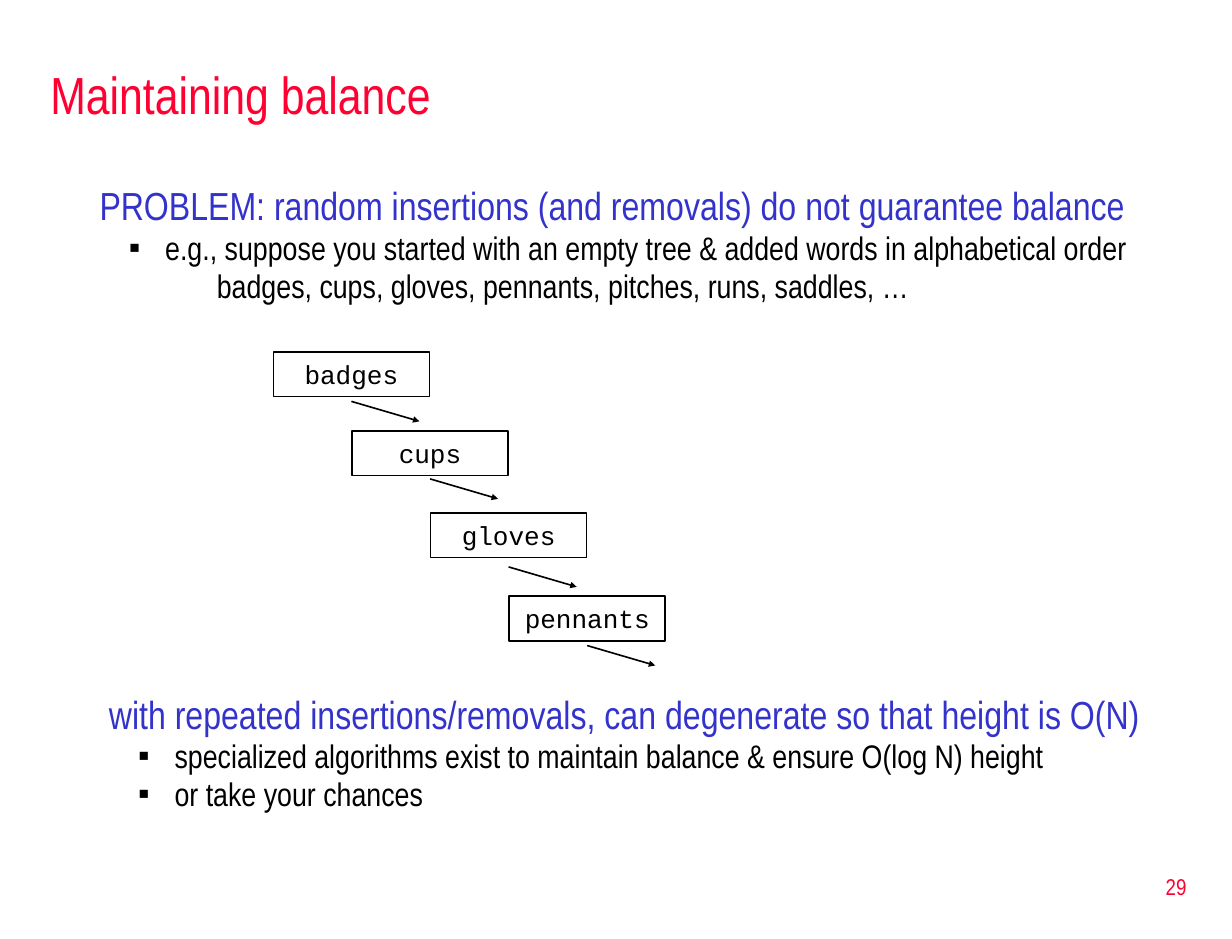
from dataclasses import dataclass

from lxml.etree import SubElement as Sub
from pptx import Presentation
from pptx.dml.color import RGBColor as RGB
from pptx.enum.shapes import MSO_CONNECTOR as Conn, MSO_SHAPE as Shape
from pptx.enum.text import MSO_ANCHOR as Anchor, PP_ALIGN as Align
from pptx.oxml.ns import qn
from pptx.util import Inches, Pt


@dataclass(frozen=True)
class Theme:
    red: RGB = RGB(0xFF, 0x00, 0x33)
    blue: RGB = RGB(0x33, 0x33, 0xCC)
    black: RGB = RGB(0, 0, 0)
    sans: str = "Arial Narrow"
    mono: str = "Courier New"
    title: int = 32
    head: int = 24
    body: int = 20
    node: int = 16
    foot: int = 14
    line: int = 1


THEME = Theme()
HEAD, ITEM, WORDS = range(3)
INDENT = {ITEM: (0.56, -0.31), WORDS: (1, 0)}

TOP = [
    (HEAD, "PROBLEM: random insertions (and removals) do not guarantee balance"),
    (ITEM, "e.g., suppose you started with an empty tree & added words in alphabetical order"),
    (WORDS, "badges, cups, gloves, pennants, pitches, runs, saddles, …"),
]
END = [
    (HEAD, "with repeated insertions/removals, can degenerate so that height is O(N)"),
    (ITEM, "specialized algorithms exist to maintain balance & ensure O(log N) height"),
    (ITEM, "or take your chances"),
]
NODES = [
    ("badges", 3, 3.42),
    ("cups", 3.67, 4.08),
    ("gloves", 4.37, 4.83),
    ("pennants", 5.08, 5.5),
]
LEFT, STEP = 2.33, 0.67
WIDE, HIGH = 1.33, 0.38


def style(para, size, color, name=THEME.sans):
    font = para.font
    font.name, font.size = name, Pt(size)
    font.color.rgb = color


def add_box(slide, left, top, width, height):
    box = slide.shapes.add_textbox(*map(Inches, (left, top, width, height)))
    box.text_frame.word_wrap = True
    return box.text_frame


def add_label(slide, text, area, size, align):
    frame = add_box(slide, *area)
    frame.vertical_anchor = Anchor.MIDDLE
    para = frame.paragraphs[0]
    para.text, para.alignment = text, align
    style(para, size, THEME.red)


def indent(para, level):
    left, first = INDENT[level]
    props = para._p.get_or_add_pPr()
    props.set("marL", str(Inches(left)))
    props.set("indent", str(Inches(first)))
    if level == ITEM:
        Sub(props, qn("a:buFont"), typeface="Arial")
        Sub(props, qn("a:buChar"), char="▪")


def add_outline(slide, rows, area):
    frame = add_box(slide, *area)
    for index, (level, text) in enumerate(rows):
        para = frame.add_paragraph() if index else frame.paragraphs[0]
        para.text, para.level = text, level
        size = THEME.body if level else THEME.head
        para.space_before = Pt(size * 0.2)
        if level:
            para.line_spacing = 0.8
            indent(para, level)
        style(para, size, THEME.black if level else THEME.blue)


def add_node(slide, text, left, top):
    node = slide.shapes.add_shape(
        Shape.RECTANGLE, *map(Inches, (left, top, WIDE, HIGH)))
    node.shadow.inherit = False
    node.fill.background()
    node.line.color.rgb = THEME.black
    node.line.width = Pt(THEME.line)
    frame = node.text_frame
    frame.word_wrap = True
    frame.vertical_anchor = Anchor.MIDDLE
    para = frame.paragraphs[0]
    para.text, para.alignment = text, Align.CENTER
    style(para, THEME.node, THEME.black, THEME.mono)


def add_arrow(slide, left, top):
    ends = (left, top, left + 0.58, top + 0.17)
    arrow = slide.shapes.add_connector(Conn.STRAIGHT, *map(Inches, ends))
    arrow.line.color.rgb = THEME.black
    arrow.line.width = Pt(THEME.line)
    Sub(arrow.line._get_or_add_ln(), qn("a:tailEnd"),
        type="triangle", w="sm", len="sm")
    Sub(arrow._element.spPr, qn("a:effectLst"))


def main():
    deck = Presentation()
    deck.slide_width, deck.slide_height = Inches(10.5), Inches(8)
    slide = deck.slides.add_slide(deck.slide_layouts[6])
    add_label(slide, "29", (8.02, 7.29, 2.19, 0.53), THEME.foot, Align.RIGHT)
    add_label(slide, "Maintaining balance", (0.33, 0.42, 9.92, 0.75),
              THEME.title, Align.LEFT)
    add_outline(slide, TOP, (0.75, 1.5, 9.43, 1.17))
    add_outline(slide, END, (0.83, 5.83, 9.43, 1.25))
    for index, (word, top, tail) in enumerate(NODES):
        left = LEFT + index * STEP
        add_node(slide, word, left, top)
        add_arrow(slide, left + WIDE / 2, tail)
    deck.save("out.pptx")


if __name__ == "__main__":
    main()
